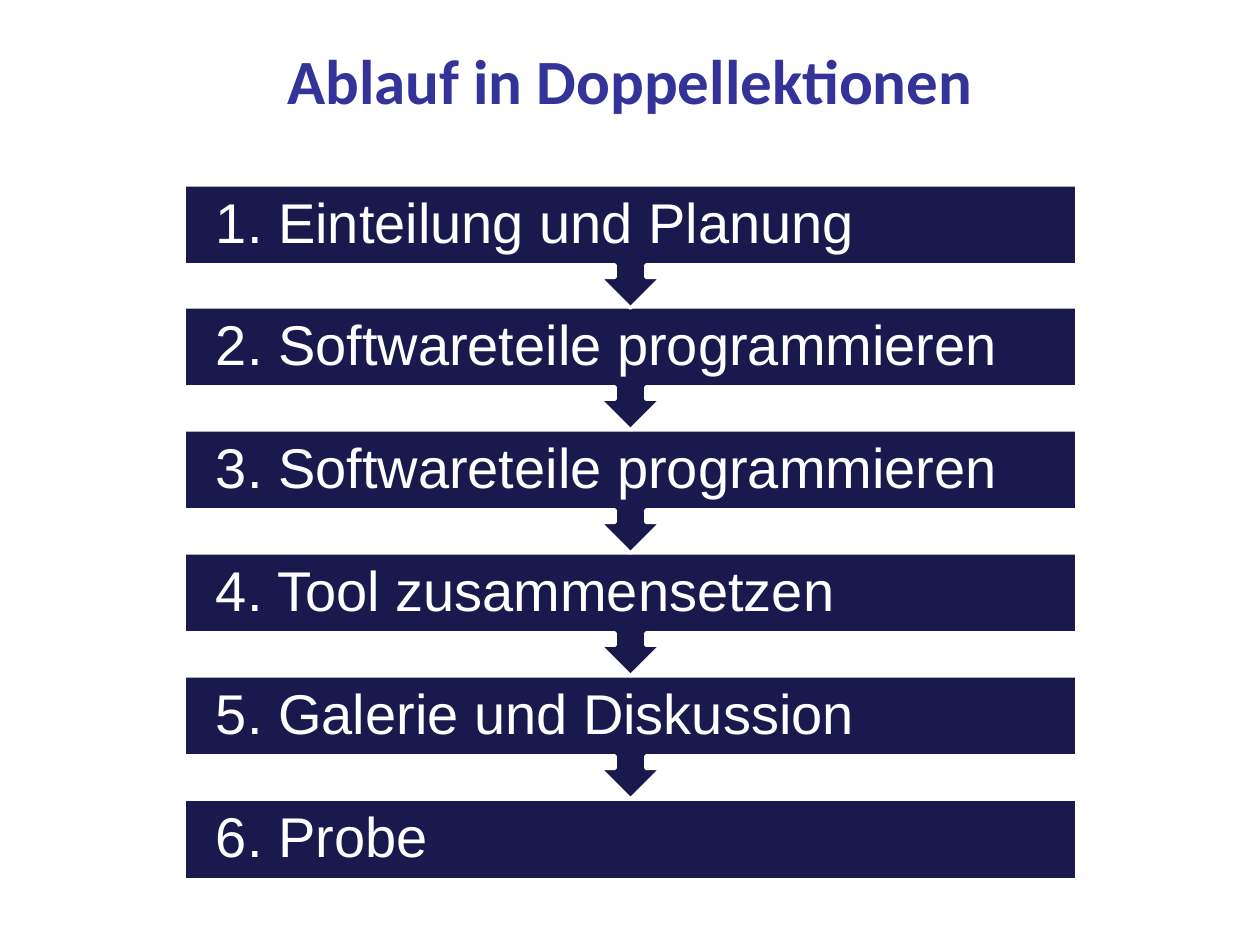
from pptx import Presentation
from pptx.dml.color import RGBColor
from pptx.enum.shapes import MSO_SHAPE
from pptx.enum.text import MSO_ANCHOR, PP_ALIGN
from pptx.util import Pt

SCALE = 914400 / 126  # EMU per px

STEPS = [
    "Einteilung und Planung",
    "Softwareteile programmieren",
    "Softwareteile programmieren",
    "Tool zusammensetzen",
    "Galerie und Diskussion",
    "Probe",
]


def px(value):
    return round(value * SCALE)


def color(code):
    return RGBColor.from_string(code)


class Deck:
    navy, blue, white = "19194D", "333399", "FFFFFF"

    def __init__(self):
        self.file = Presentation()
        self.file.slide_width, self.file.slide_height = px(1260), px(945)
        self.slide = self.file.slides.add_slide(self.file.slide_layouts[5])
        self.group = None

    def letter(self, frame, text, size, font, tint, bold, align):
        frame.word_wrap = True
        frame.vertical_anchor = MSO_ANCHOR.MIDDLE
        line = frame.paragraphs[0]
        line.alignment = align
        run = line.add_run()
        run.text = text
        style = {"size": Pt(size), "name": font, "bold": bold}
        for key, value in style.items():
            setattr(run.font, key, value)
        run.font.color.rgb = color(tint)
        return line

    def title(self, text, left, top, width, height):
        box = self.slide.shapes.title
        place = {"left": left, "top": top, "width": width, "height": height}
        for key, value in place.items():
            setattr(box, key, px(value))
        self.letter(box.text_frame, text, 36, "Calibri", self.blue, True, PP_ALIGN.CENTER)

    def start(self):
        self.group = self.slide.shapes.add_group_shape().shapes

    def bar(self, kind, left, top, width, height, turn=0):
        shape = self.group.add_shape(kind, px(left), px(top), px(width), px(height))
        shape.rotation = turn
        shape.shadow.inherit = False
        shape.fill.solid()
        shape.fill.fore_color.rgb = color(self.navy)
        shape.line.color.rgb = color(self.white)
        shape.line.width = Pt(2)

    def label(self, text, left, top, width, height):
        box = self.group.add_textbox(px(left), px(top), px(width), px(height))
        frame = box.text_frame
        margins = {
            "margin_left": 32,
            "margin_top": 32,
            "margin_right": 32,
            "margin_bottom": 32,
        }
        for key, value in margins.items():
            setattr(frame, key, px(value))
        line = self.letter(frame, text, 32, "Arial", self.white, False, PP_ALIGN.LEFT)
        line.line_spacing = 0.9


def main():
    deck = Deck()
    deck.title("Ablauf in Doppellektionen", 15, 0, 1230, 159)

    # Steps, evenly spread and stacked from the last up to the first
    left, width, high, tall = 184, 893, 81, 123
    first, last = 185, 799
    end = len(STEPS) - 1
    deck.start()
    for i in range(end, -1, -1):
        top = first + (last - first) * i // end
        if i == end:
            deck.bar(MSO_SHAPE.RECTANGLE, left, top, width, high)
        else:
            deck.bar(MSO_SHAPE.UP_ARROW_CALLOUT, left, top, width, tall, turn=180)
        deck.label(f"{i + 1}. {STEPS[i]}", left, top, width, high)

    deck.file.save("out.pptx")


if __name__ == "__main__":
    main()
